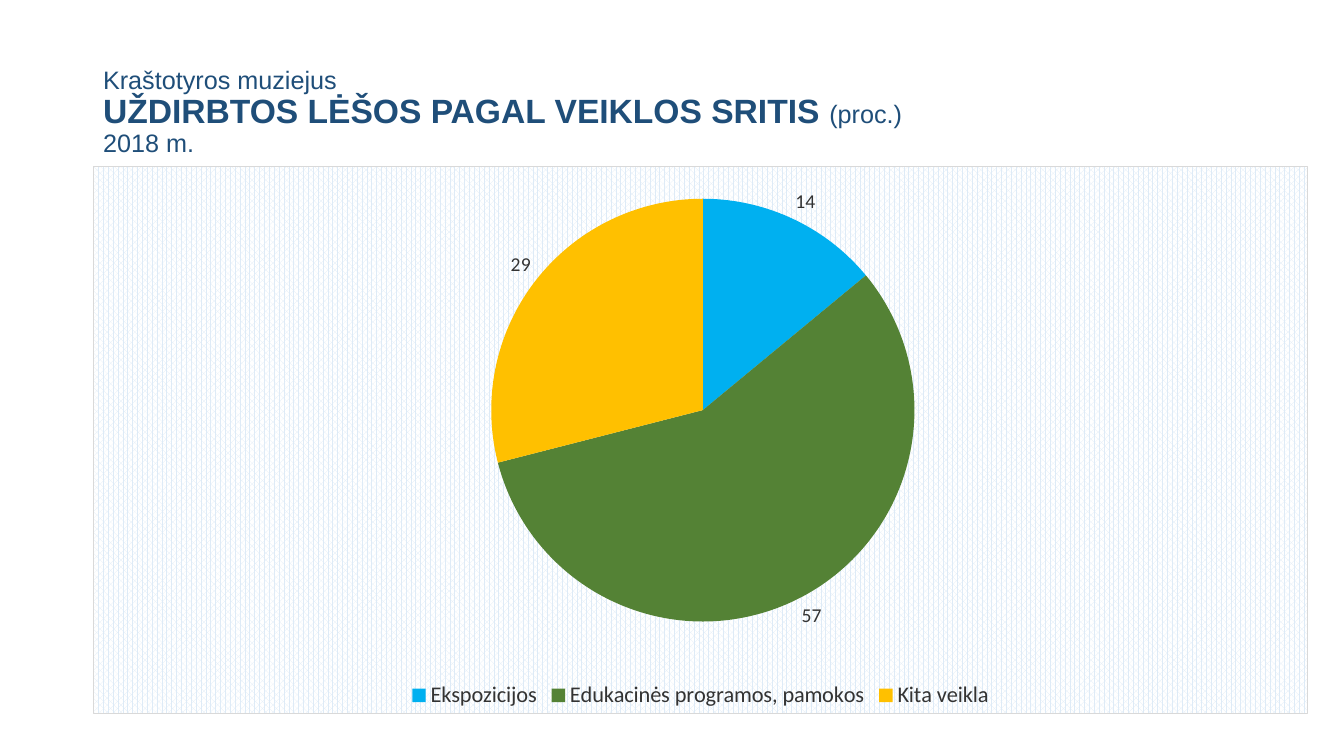
from copy import deepcopy

from lxml.etree import fromstring
from pptx import Presentation
from pptx.chart.data import CategoryChartData
from pptx.dml.color import RGBColor
from pptx.enum.chart import XL_CHART_TYPE, XL_LABEL_POSITION, XL_LEGEND_POSITION
from pptx.enum.text import MSO_ANCHOR, MSO_AUTO_SIZE, PP_ALIGN
from pptx.oxml.ns import nsdecls, qn
from pptx.util import Emu, Pt

EMU_PER_PX = 914400 / 100.8


def px(length):
    return Emu(round(length * EMU_PER_PX))


def color(value):
    return RGBColor.from_string(value)


deck = Presentation()
deck.slide_width, deck.slide_height = px(1344), px(756)
page = deck.slides.add_slide(deck.slide_layouts[5])

# Title: three lines in one paragraph
title = page.shapes.title
title.left, title.top, title.width, title.height = px(93), px(40), px(1159), px(146)
frame = title.text_frame
frame.word_wrap = True
frame.auto_size = MSO_AUTO_SIZE.NONE
frame.vertical_anchor = MSO_ANCHOR.MIDDLE
para = frame.paragraphs[0]
para.alignment = PP_ALIGN.LEFT
para.line_spacing = 0.9
title_runs = [
    ("Kraštotyros muziejus", 18, False, True),
    ("UŽDIRBTOS LĖŠOS PAGAL VEIKLOS SRITIS ", 24, True, False),
    ("(proc.)", 18, False, True),
    ("2018 m.", 18, False, False),
]
for text, size, bold, ends_line in title_runs:
    span = para.add_run()
    span.text = text
    span.font.name = "Arial"
    span.font.size = Pt(size)
    span.font.bold = bold
    span.font.color.rgb = color("1F4E79")
    if ends_line:
        para.add_line_break()

# Line breaks take the format of the run before them
for line_break in para._p.findall(qn("a:br")):
    line_break.append(deepcopy(line_break.getprevious().find(qn("a:rPr"))))

# Pie chart of earned funds
earnings = CategoryChartData(number_format="0")
earnings.categories = ["Ekspozicijos", "Edukacinės programos, pamokos", "Kita veikla"]
earnings.add_series("Series 1", [14, 57, 29])
chart = page.shapes.add_chart(
    XL_CHART_TYPE.PIE, px(93), px(166), px(1215), px(548), earnings
).chart
chart.has_title = False
chart.font.name = "Calibri"
chart.font.size = Pt(10)
chart.font.color.rgb = color("000000")

# Slices
plot = chart.plots[0]
plot.vary_by_categories = True
for index, slice_color in enumerate(["00B0F0", "548235", "FFC000"]):
    fill = plot.series[0].points[index].format.fill
    fill.solid()
    fill.fore_color.rgb = color(slice_color)

# Value labels and legend
plot.has_data_labels = True
labels = plot.data_labels
labels.show_value = True
labels.show_percentage = False
labels.number_format = "0"
labels.number_format_is_linked = False
labels.position = XL_LABEL_POSITION.OUTSIDE_END
chart.has_legend = True
legend = chart.legend
legend.position = XL_LEGEND_POSITION.BOTTOM
legend.include_in_layout = False
for font, size in [(labels.font, 14), (legend.font, 16)]:
    font.name = "Calibri"
    font.size = Pt(size)
    font.color.rgb = color("333333")

# Fixed plot area
plot_area = chart.element.find(".//" + qn("c:plotArea"))
for layout in plot_area.findall(qn("c:layout")):
    plot_area.remove(layout)
plot_area.insert(0, fromstring(
    f'<c:layout {nsdecls("c")}><c:manualLayout><c:layoutTarget val="inner"/>'
    '<c:xMode val="edge"/><c:yMode val="edge"/><c:x val="0.072"/><c:y val="0.059"/>'
    '<c:w val="0.86"/><c:h val="0.773"/></c:manualLayout></c:layout>'
))

# Patterned chart background with a thin border
chart.element.find(qn("c:chart")).addnext(fromstring(
    f'<c:spPr {nsdecls("c", "a")}><a:pattFill prst="pct70">'
    '<a:fgClr><a:srgbClr val="DEEBF7"/></a:fgClr>'
    '<a:bgClr><a:srgbClr val="FFFFFF"/></a:bgClr></a:pattFill>'
    f'<a:ln w="{Pt(0.75)}"><a:solidFill><a:srgbClr val="D9D9D9"/></a:solidFill></a:ln>'
    '</c:spPr>'
))

deck.save("out.pptx")
